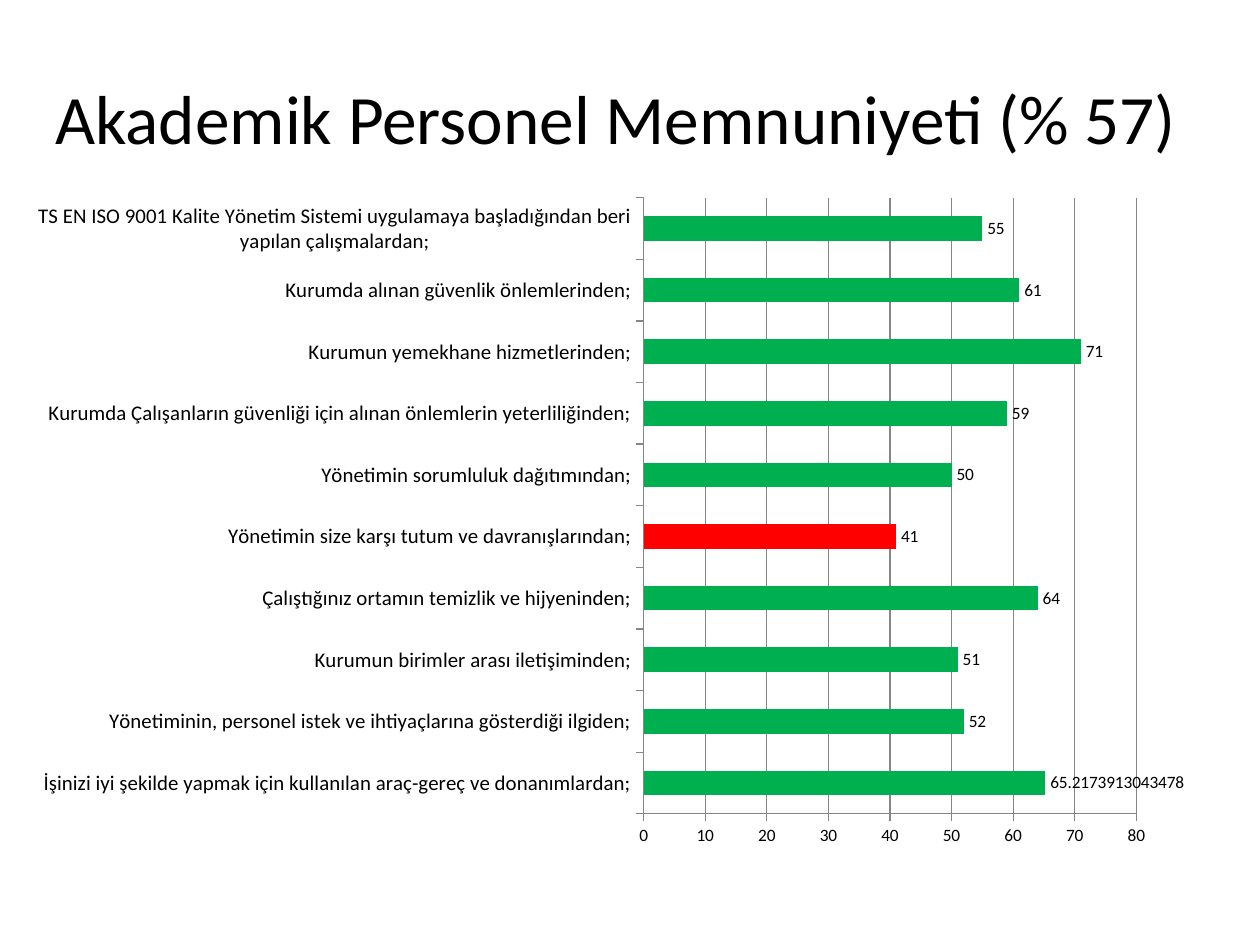
from dataclasses import dataclass

from lxml.etree import SubElement
from pptx import Presentation
from pptx.chart.chart import Chart
from pptx.chart.data import CategoryChartData
from pptx.dml.color import RGBColor
from pptx.enum.chart import XL_CHART_TYPE as ChartType
from pptx.enum.chart import XL_LABEL_POSITION as LabelPosition
from pptx.enum.chart import XL_TICK_MARK as TickMark
from pptx.enum.text import MSO_ANCHOR as Anchor
from pptx.enum.text import PP_ALIGN as Align
from pptx.oxml.ns import qn
from pptx.util import Inches, Pt

FONT = "Calibri"
COLORS = {"text": "000000", "satisfied": "00B050", "dissatisfied": "FF0000", "grid": "868686"}
QUESTION_SIZE, NUMBER_SIZE = 11.9, 9.9
THRESHOLD = 50


@dataclass(frozen=True)
class Box:
    left: float
    top: float
    width: float
    height: float


@dataclass(frozen=True)
class Answer:
    question: str
    score: float
    label: str = ""


TITLE_BOX = Box(0.28, 0.3, 9.22, 1.25)
CHART_BOX = Box(0.2, 1.47, 9.21, 5.35)
PLOT_BOX = Box(5.11, 1.57, 3.91, 4.89)

ANSWERS = [
    Answer(
        "İşinizi iyi şekilde yapmak için kullanılan araç-gereç ve donanımlardan;",
        65.22,
        "65.2173913043478",
    ),
    Answer("Yönetiminin, personel istek ve ihtiyaçlarına gösterdiği ilgiden;", 52),
    Answer("Kurumun birimler arası iletişiminden;", 51),
    Answer("Çalıştığınız ortamın temizlik ve hijyeninden;", 64),
    Answer("Yönetimin size karşı tutum ve davranışlarından;", 41),
    Answer("Yönetimin sorumluluk dağıtımından;", 50),
    Answer("Kurumda Çalışanların güvenliği için alınan önlemlerin yeterliliğinden;", 59),
    Answer("Kurumun yemekhane hizmetlerinden;", 71),
    Answer("Kurumda alınan güvenlik önlemlerinden;", 61),
    Answer(
        "TS EN ISO 9001 Kalite Yönetim Sistemi uygulamaya başladığından beri yapılan çalışmalardan;", 55
    ),
]


def color(name: str) -> RGBColor:
    """Return the named colour."""
    return RGBColor.from_string(COLORS[name])


def format_font(font, size: float) -> None:
    """Apply the slide's typeface and text colour at the given size."""
    font.name = FONT
    font.size = Pt(size)
    font.color.rgb = color("text")


def add_title(slide, text: str, box: Box) -> None:
    """Place and format the title placeholder."""
    title = slide.shapes.title
    title.left, title.top = Inches(box.left), Inches(box.top)
    title.width, title.height = Inches(box.width), Inches(box.height)
    frame = title.text_frame
    frame.text = text
    frame.vertical_anchor = Anchor.MIDDLE
    paragraph = frame.paragraphs[0]
    paragraph.alignment = Align.CENTER
    format_font(paragraph.runs[0].font, 39.6)


def set_plot_area(chart: Chart, outer: Box, inner: Box) -> None:
    """Fix the inner plot area inside the chart."""
    plot_area = chart.plots[0]._element.getparent()
    for old_layout in plot_area.findall(qn("c:layout")):
        plot_area.remove(old_layout)
    layout = SubElement(plot_area, qn("c:layout"))
    plot_area.insert(0, layout)
    manual = SubElement(layout, qn("c:manualLayout"))
    settings = {
        "layoutTarget": "inner",
        "xMode": "edge",
        "yMode": "edge",
        "x": (inner.left - outer.left) / outer.width,
        "y": (inner.top - outer.top) / outer.height,
        "w": inner.width / outer.width,
        "h": inner.height / outer.height,
    }
    for tag, value in settings.items():
        SubElement(manual, qn(f"c:{tag}")).set("val", str(value))


def format_axes(chart: Chart) -> None:
    """Format both axes and the vertical gridlines."""
    category_axis, value_axis = chart.category_axis, chart.value_axis
    value_axis.minimum_scale, value_axis.maximum_scale = 0, 80
    value_axis.major_unit = 10
    value_axis.has_major_gridlines = True
    category_axis.has_major_gridlines = False
    for axis, size in ((category_axis, QUESTION_SIZE), (value_axis, NUMBER_SIZE)):
        axis.major_tick_mark = TickMark.OUTSIDE
        axis.minor_tick_mark = TickMark.NONE
        format_font(axis.tick_labels.font, size)
    for lines in (category_axis, value_axis, value_axis.major_gridlines):
        lines.format.line.color.rgb = color("grid")
        lines.format.line.width = Pt(0.75)


def format_bars(series, answers: list[Answer]) -> None:
    """Colour and label the bars, marking scores below the threshold."""
    series.format.fill.solid()
    series.format.fill.fore_color.rgb = color("satisfied")
    labels = series.data_labels
    labels.show_value = True
    labels.position = LabelPosition.OUTSIDE_END
    format_font(labels.font, NUMBER_SIZE)
    for index, answer in enumerate(answers):
        point = series.points[index]
        if answer.score < THRESHOLD:
            point.format.fill.solid()
            point.format.fill.fore_color.rgb = color("dissatisfied")
        if answer.label:
            frame = point.data_label.text_frame
            frame.text = answer.label
            format_font(frame.paragraphs[0].runs[0].font, NUMBER_SIZE)
            point.data_label.position = LabelPosition.OUTSIDE_END


def add_satisfaction_chart(slide, answers: list[Answer], box: Box) -> None:
    """Draw the scores as a bar chart."""
    data = CategoryChartData()
    data.categories = [answer.question for answer in answers]
    data.add_series("Series 1", [answer.score for answer in answers])
    position = map(Inches, (box.left, box.top, box.width, box.height))
    chart = slide.shapes.add_chart(ChartType.BAR_CLUSTERED, *position, data).chart
    chart.has_legend = False
    chart.has_title = False
    format_font(chart.font, NUMBER_SIZE)
    set_plot_area(chart, box, PLOT_BOX)
    format_axes(chart)
    plot = chart.plots[0]
    plot.gap_width = 150
    plot.vary_by_categories = False
    format_bars(plot.series[0], answers)


def main() -> None:
    """Build and save the presentation."""
    presentation = Presentation()
    presentation.slide_width, presentation.slide_height = Inches(10), Inches(7.5)
    slide = presentation.slides.add_slide(presentation.slide_layouts[5])
    add_title(slide, "Akademik Personel Memnuniyeti (% 57)", TITLE_BOX)
    add_satisfaction_chart(slide, ANSWERS, CHART_BOX)
    presentation.save("out.pptx")


if __name__ == "__main__":
    main()
